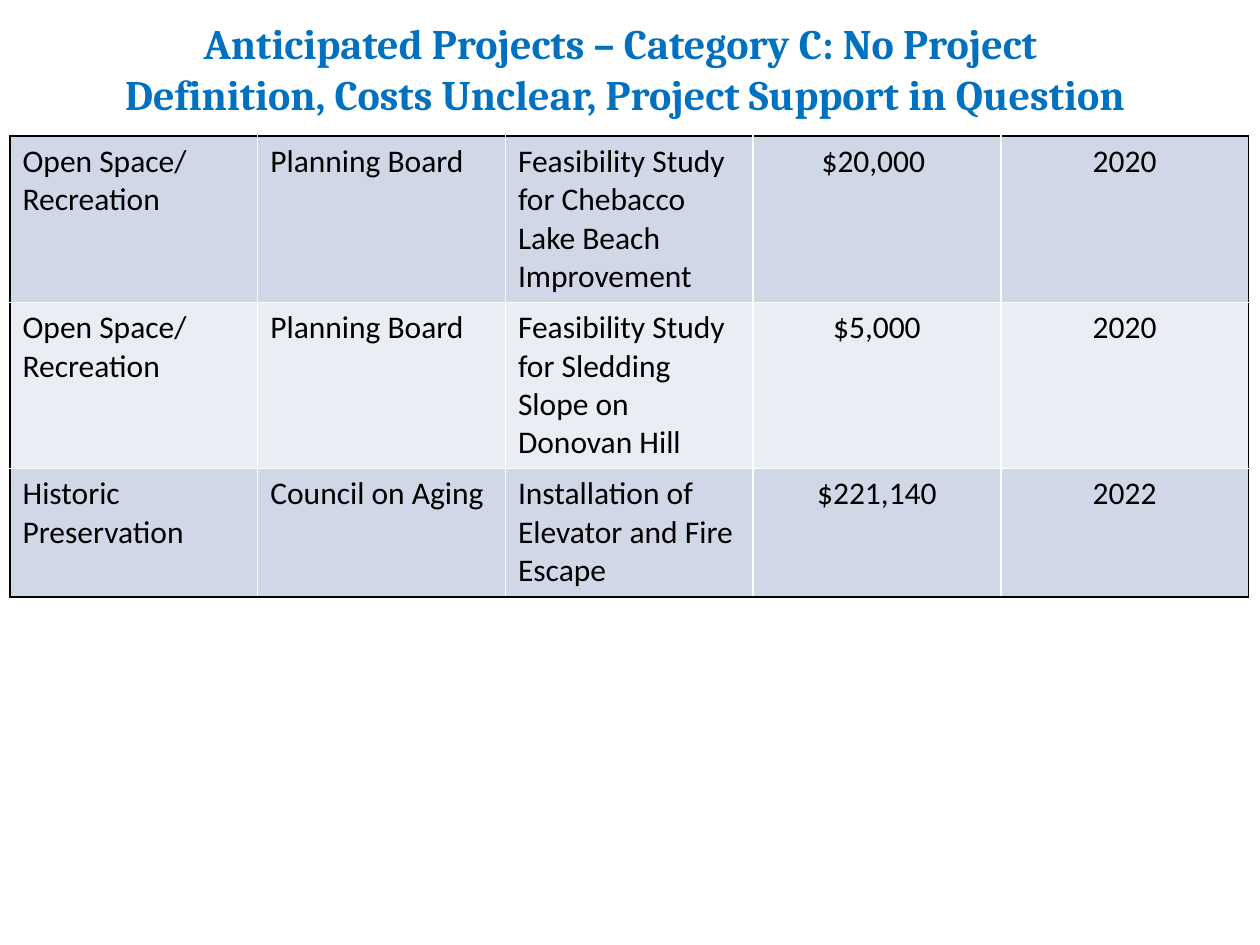
from lxml import etree
from pptx import Presentation
from pptx.dml.color import RGBColor
from pptx.enum.text import MSO_ANCHOR, PP_ALIGN
from pptx.oxml.ns import qn
from pptx.util import Inches, Pt

LEFT, CENTER = PP_ALIGN.LEFT, PP_ALIGN.CENTER
MIDDLE = MSO_ANCHOR.MIDDLE

COLORS = {
    "title": "0070C0",
    "text": "000000",
    "outline": "000000",
    "grid": "FFFFFF",
    "odd_row": "D0D8E8",
    "even_row": "E9EDF4",
}

TITLE = ("Anticipated Projects – Category C: No Project \v"
         "Definition, Costs Unclear, Project Support in Question")
PROJECTS = [
    ("Open Space/ Recreation", "Planning Board",
     "Feasibility Study for Chebacco Lake Beach Improvement", "$20,000 ", "2020"),
    ("Open Space/\nRecreation", "Planning Board",
     "Feasibility Study for Sledding Slope on Donovan Hill", "$5,000", "2020"),
    ("Historic Preservation", "Council on Aging",
     "Installation of Elevator and Fire Escape", "$221,140", "2022"),
]
ALIGNMENTS = [LEFT, LEFT, LEFT, CENTER, CENTER]
ROW_HEIGHTS = [1.32, 1.32, 1.02]
TABLE_LEFT, TABLE_TOP, TABLE_WIDTH = 0.08, 1.08, 9.83


def style_paragraph(paragraph, font_name, size, color, alignment, bold=False):
    paragraph.alignment = alignment
    paragraph.font.name = font_name
    paragraph.font.size = Pt(size)
    paragraph.font.bold = bold
    paragraph.font.color.rgb = RGBColor.from_string(COLORS[color])


def set_borders(cell, outer_edges):
    """Draw the outer edges in the outline colour and the others as grid lines."""
    properties = cell._tc.get_or_add_tcPr()
    for position, (edge, is_outer) in enumerate(outer_edges.items()):
        line = etree.Element(qn(f"a:{edge}"), w=str(Pt(1)))
        fill = etree.SubElement(line, qn("a:solidFill"))
        color = COLORS["outline" if is_outer else "grid"]
        etree.SubElement(fill, qn("a:srgbClr"), val=color)
        properties.insert(position, line)


def add_title(slide):
    shape = slide.shapes.add_textbox(Inches(-0.25), 0, Inches(10.42), Inches(1.08))
    frame = shape.text_frame
    frame.word_wrap = True
    frame.vertical_anchor = MIDDLE
    frame.text = TITLE
    style_paragraph(frame.paragraphs[0], "Cambria", 24, "title", CENTER, bold=True)


def add_project_table(slide):
    row_count, column_count = len(PROJECTS), len(ALIGNMENTS)
    table = slide.shapes.add_table(
        row_count, column_count, Inches(TABLE_LEFT), Inches(TABLE_TOP),
        Inches(TABLE_WIDTH), Inches(sum(ROW_HEIGHTS))).table
    table.first_row = False
    for row, height in zip(table.rows, ROW_HEIGHTS):
        row.height = Inches(height)

    for row_index, project in enumerate(PROJECTS):
        row_color = COLORS["even_row" if row_index % 2 else "odd_row"]
        for column_index, text in enumerate(project):
            cell = table.cell(row_index, column_index)
            cell.text = text
            cell.fill.solid()
            cell.fill.fore_color.rgb = RGBColor.from_string(row_color)
            for paragraph in cell.text_frame.paragraphs:
                style_paragraph(paragraph, "Calibri", 18, "text", ALIGNMENTS[column_index])
            set_borders(cell, {
                "lnL": column_index == 0,
                "lnR": column_index == column_count - 1,
                "lnT": row_index == 0,
                "lnB": row_index == row_count - 1,
            })


def main():
    presentation = Presentation()
    presentation.slide_width = Inches(10)
    presentation.slide_height = Inches(7.5)
    slide = presentation.slides.add_slide(presentation.slide_layouts[6])
    add_title(slide)
    add_project_table(slide)
    presentation.save("out.pptx")


if __name__ == "__main__":
    main()
